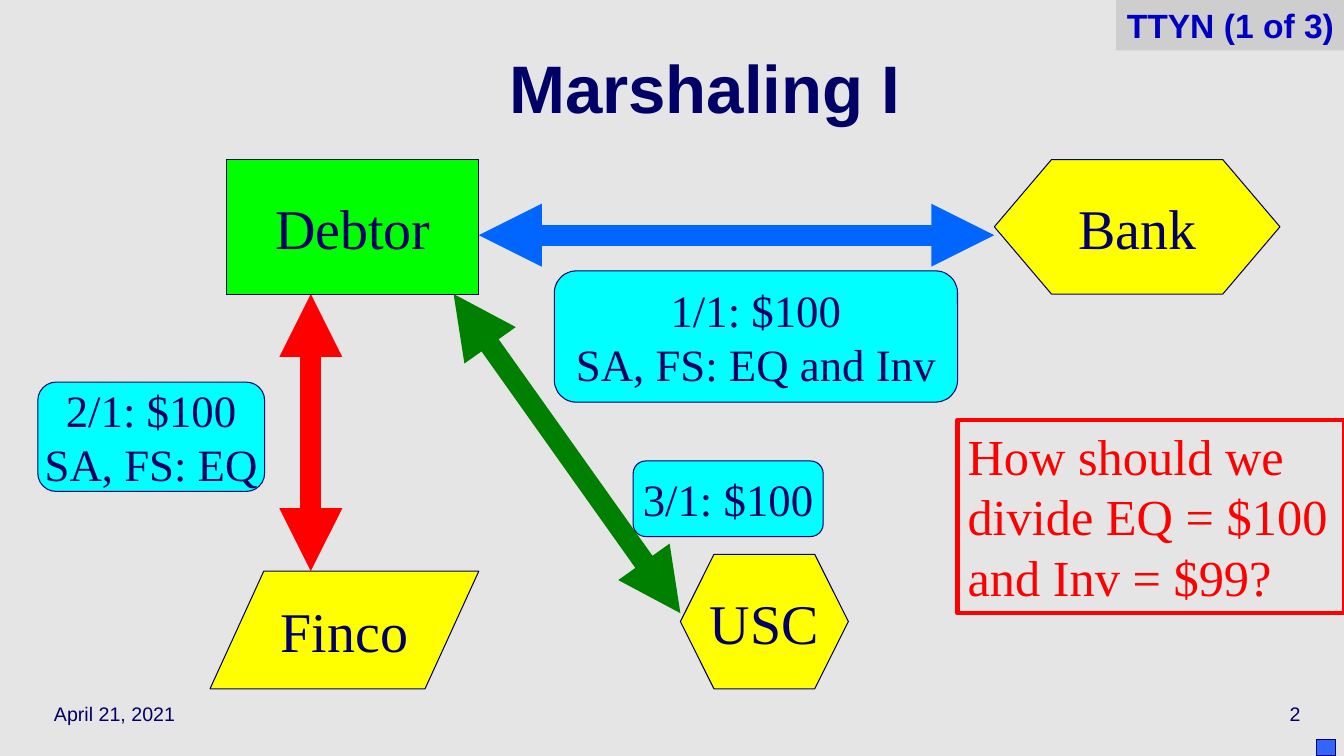
from lxml import etree
from pptx import Presentation
from pptx.dml.color import RGBColor
from pptx.enum.shapes import MSO_CONNECTOR, MSO_SHAPE
from pptx.enum.text import MSO_ANCHOR, PP_ALIGN
from pptx.oxml.ns import qn
from pptx.util import Pt

PX = 9525  # EMU per px, 96 px to the inch
LEFT, CENTER, RIGHT = PP_ALIGN.LEFT, PP_ALIGN.CENTER, PP_ALIGN.RIGHT
TOP, MIDDLE = MSO_ANCHOR.TOP, MSO_ANCHOR.MIDDLE
RECT, BOX = MSO_SHAPE.RECTANGLE, MSO_SHAPE.FLOWCHART_PROCESS
HEXAGON, SLANTED = MSO_SHAPE.FLOWCHART_PREPARATION, MSO_SHAPE.FLOWCHART_DATA
ROUNDED = MSO_SHAPE.FLOWCHART_ALTERNATE_PROCESS
STRAIGHT = MSO_CONNECTOR.STRAIGHT
SANS, SERIF = "Arial", "Times New Roman"
COLORS = {name: RGBColor.from_string(value) for name, value in {
    "back": "E5E5E5", "tag": "CECECE", "navy": "000066", "tag text": "0000C0",
    "yellow": "FFFF00", "lime": "00FF00", "cyan": "00FFFF", "red": "FF0000",
    "blue": "0066FF", "green": "008000", "square": "3366FF"}.items()}


def write(shape, lines, size, font, color="navy", align=CENTER, anchor=MIDDLE,
          wrap=False, bold=False):
    tf = shape.text_frame
    tf.word_wrap, tf.vertical_anchor = wrap, anchor
    for i, line in enumerate(lines):
        p = tf.add_paragraph() if i else tf.paragraphs[0]
        p.alignment = align
        r = p.add_run()
        r.text = line
        r.font.size, r.font.name, r.font.bold = Pt(size), font, bold
        r.font.color.rgb = COLORS[color]


def add_box(kind, place, fill=None, line="navy", width=0.75):
    sp = s.shapes.add_shape(kind, *[v * PX for v in place])
    sp.shadow.inherit = False
    if fill:
        sp.fill.solid()
        sp.fill.fore_color.rgb = COLORS[fill]
    else:
        sp.fill.background()
    if line:
        sp.line.color.rgb = COLORS[line]
        sp.line.width = Pt(width)
    else:
        sp.line.fill.background()
    return sp


prs = Presentation()
prs.slide_width, prs.slide_height = 1280 * PX, 720 * PX
s = prs.slides.add_slide(prs.slide_layouts[5])
s.background.fill.solid()
s.background.fill.fore_color.rgb = COLORS["back"]

# Title
title = s.shapes.title
title.left, title.top, title.width, title.height = [v * PX for v in (85, 32, 1173, 120)]
write(title, ["Marshaling I"], 48, SANS, wrap=True, bold=True)
title.text_frame.paragraphs[0].line_spacing = 0.7

# Date and slide number
for text, left, align in (("April 21, 2021", 42, LEFT), ("2", 981, RIGHT)):
    footer = s.shapes.add_textbox(*[v * PX for v in (left, 656, 267, 48)])
    write(footer, [text], 14, SANS, align=align, wrap=True)

# Loans, as double-headed arrows
for color, ends in (("blue", (456, 224, 947, 224)),
                    ("red", (296, 280, 296, 544)),
                    ("green", (432, 280, 648, 584))):
    loan = s.shapes.add_connector(STRAIGHT, *[v * PX for v in ends])
    loan.line.color.rgb = COLORS[color]
    loan.line.width = Pt(15)
    ln = loan.line._get_or_add_ln()
    for end in ("a:headEnd", "a:tailEnd"):
        etree.SubElement(ln, qn(end)).set("type", "triangle")
    etree.SubElement(loan._element.spPr, qn("a:effectLst"))

# Parties and loan terms
for kind, place, fill, size, lines in (
        (SLANTED, (200, 544, 256, 112), "yellow", 40, ["Finco"]),
        (BOX, (216, 152, 240, 128), "lime", 40, ["Debtor"]),
        (HEXAGON, (947, 152, 272, 128), "yellow", 40, ["Bank"]),
        (HEXAGON, (648, 528, 160, 128), "yellow", 40, ["USC"]),
        (ROUNDED, (36, 364, 216, 104), "cyan", 32, ["2/1: $100", "SA, FS: EQ"]),
        (ROUNDED, (528, 258, 384, 125), "cyan", 32, ["1/1: $100", "SA, FS: EQ and Inv"]),
        (ROUNDED, (603, 439, 181, 72), "cyan", 32, ["3/1: $100"])):
    write(add_box(kind, place, fill), lines, size, SERIF)

# Question
question = add_box(RECT, (912, 400, 368, 184), line="red", width=3)
write(question, ["How should we divide EQ = $100 and Inv = $99?"], 36, SERIF,
      "red", LEFT, TOP, wrap=True)

# Corner square and tag
add_box(RECT, (1254, 704, 18, 16), "square")
tag = add_box(RECT, (1063, 0, 217, 48), "tag", line=None)
write(tag, ["TTYN (1 of 3)"], 24, SANS, "tag text", RIGHT, TOP, wrap=True, bold=True)

prs.save("out.pptx")
